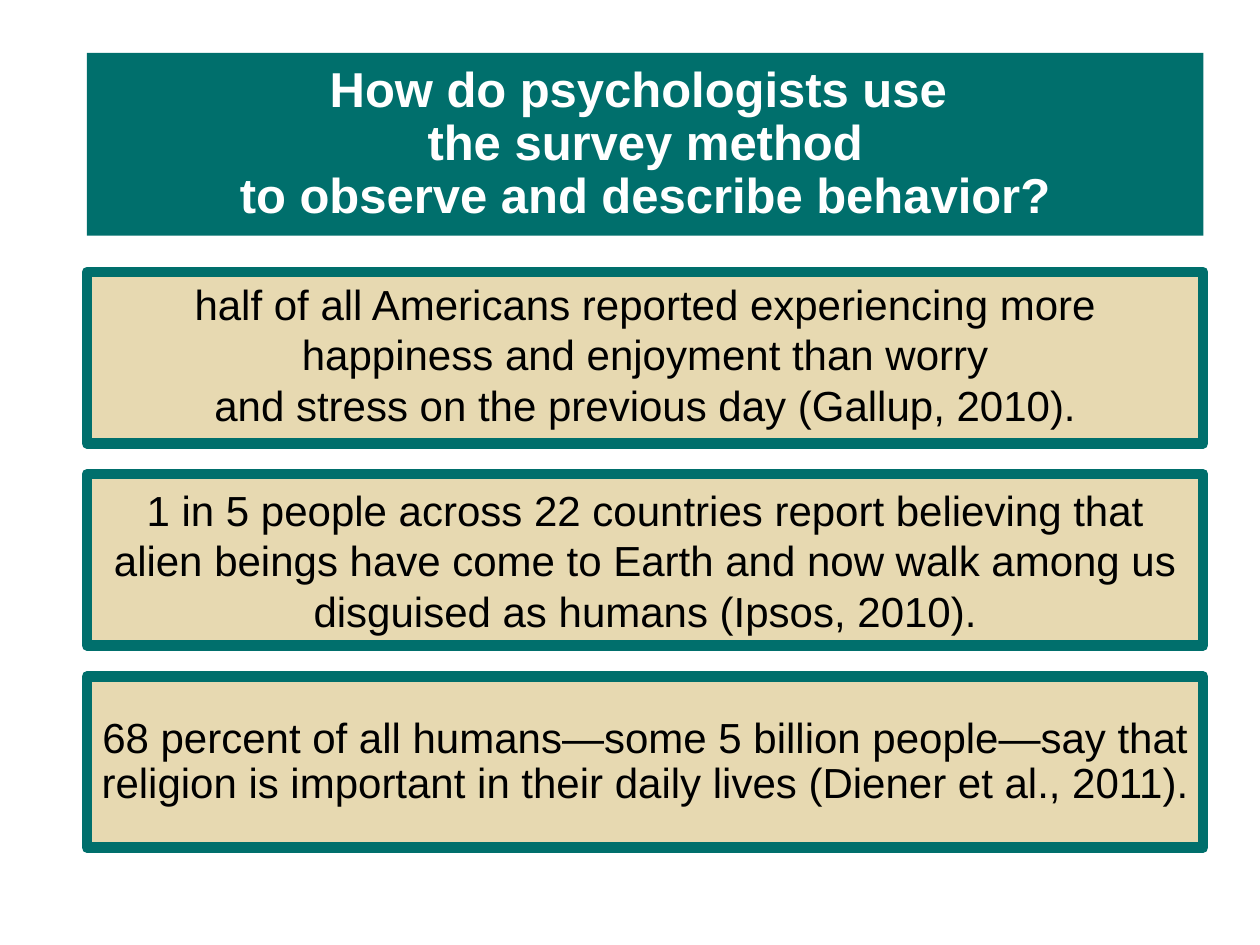
import pptx
import pptx.util
import pptx.dml.color
import pptx.enum.shapes
import pptx.enum.text
from lxml import etree

Pt = pptx.util.Pt
ANCHOR = pptx.enum.text.MSO_ANCHOR
TEAL, SAND, WHITE, BLACK = "006F6C", "E7D9B1", "FFFFFF", "000000"

TITLE = "How do psychologists use \vthe survey method\vto observe and describe behavior?"
FINDINGS = [
    {
        "text": "half of all Americans reported experiencing more happiness and enjoyment than worry\n"
                "and stress on the previous day (Gallup, 2010).",
        "anchor": ANCHOR.TOP,
        "spacing": 1.0,
    },
    {
        "text": "1 in 5 people across 22 countries report believing that alien beings have come "
                "to Earth and now walk among us disguised as humans (Ipsos, 2010).",
        "anchor": ANCHOR.MIDDLE,
        "spacing": 1.0,
    },
    {
        "text": "68 percent of all humans—some 5 billion people—say that religion is important "
                "in their daily lives (Diener et al., 2011).",
        "anchor": ANCHOR.MIDDLE,
        "spacing": 0.9,
    },
]

LEFT, WIDTH = 49.68, 637.92
TITLE_TOP, TITLE_HEIGHT = 30.24, 104.4
FIRST_TOP, BOX_HEIGHT, BOX_STEP = 155.52, 97.92, 115.5


def color(value):
    return pptx.dml.color.RGBColor.from_string(value)


def place(shape, top, height):
    shape.left, shape.top = Pt(LEFT), Pt(top)
    shape.width, shape.height = Pt(WIDTH), Pt(height)


def fill(shape, value):
    shape.fill.solid()
    shape.fill.fore_color.rgb = color(value)


def write(shape, text, size, text_color, anchor, spacing, bold=False):
    frame = shape.text_frame
    frame.text = text
    frame.word_wrap = True
    frame.auto_size = pptx.enum.text.MSO_AUTO_SIZE.NONE
    frame.vertical_anchor = anchor
    for paragraph in frame.paragraphs:
        paragraph.alignment = pptx.enum.text.PP_ALIGN.CENTER
        paragraph.line_spacing = spacing
        paragraph.space_before = Pt(0)
        for run in paragraph.runs:
            run.font.name = "Arial"
            run.font.size = Pt(size)
            run.font.bold = bold
            run.font.color.rgb = color(text_color)


def add_finding(slide, finding, top):
    shape = slide.shapes.add_shape(pptx.enum.shapes.MSO_SHAPE.RECTANGLE, 0, 0, 0, 0)
    place(shape, top, BOX_HEIGHT)
    shape.shadow.inherit = False
    fill(shape, SAND)
    shape.line.color.rgb = color(TEAL)
    shape.line.width = Pt(6)
    line = shape.line.fill._xPr
    etree.SubElement(line, pptx.oxml.ns.qn("a:round"))
    write(shape, finding["text"], 24, BLACK, finding["anchor"], finding["spacing"])


def main():
    presentation = pptx.Presentation()
    presentation.slide_width, presentation.slide_height = Pt(720), Pt(540)
    slide = presentation.slides.add_slide(presentation.slide_layouts[5])
    title = slide.shapes.title
    place(title, TITLE_TOP, TITLE_HEIGHT)
    fill(title, TEAL)
    write(title, TITLE, 28, WHITE, ANCHOR.MIDDLE, 0.9, bold=True)
    for index, finding in enumerate(FINDINGS):
        add_finding(slide, finding, FIRST_TOP + index * BOX_STEP)
    presentation.save("out.pptx")


if __name__ == "__main__":
    main()
